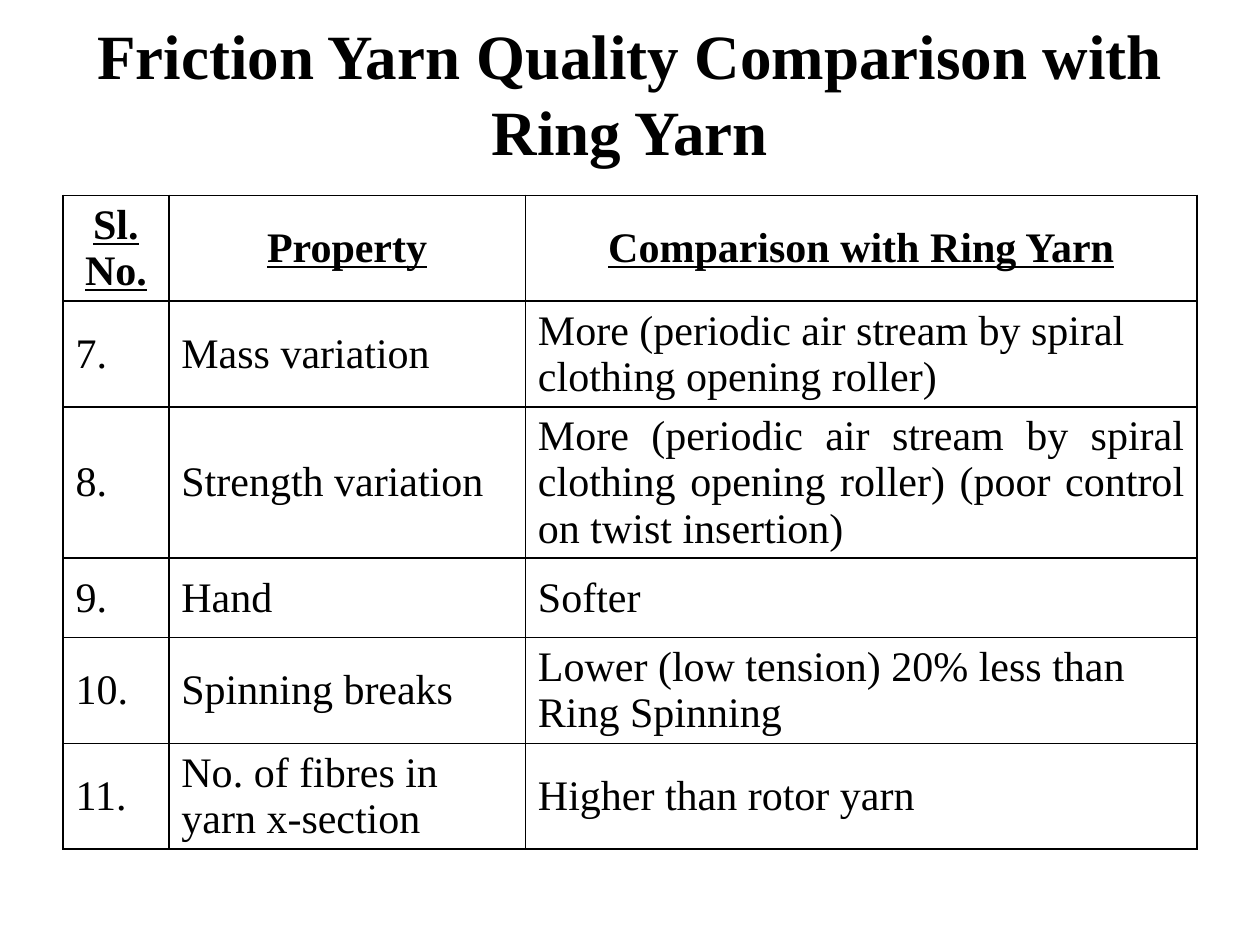
from lxml import etree
from pptx import Presentation
from pptx.dml.color import RGBColor
from pptx.enum.text import MSO_ANCHOR, PP_ALIGN
from pptx.oxml.ns import qn
from pptx.util import Inches, Pt

MIDDLE = MSO_ANCHOR.MIDDLE
LEFT, CENTER, JUSTIFY = PP_ALIGN.LEFT, PP_ALIGN.CENTER, PP_ALIGN.JUSTIFY
FONT, BLACK, WHITE = "Times New Roman", "000000", "FFFFFF"

TITLE = "Friction Yarn Quality Comparison with Ring Yarn"
ROWS = [
    ("Sl. No.", "Property", "Comparison with Ring Yarn"),
    ("7.", "Mass variation",
     "More (periodic air stream by spiral clothing opening roller)"),
    ("8.", "Strength variation",
     "More (periodic air stream by spiral clothing opening roller) "
     "(poor control on twist insertion)"),
    ("9.", "Hand", "Softer"),
    ("10.", "Spinning breaks", "Lower (low tension) 20% less than Ring Spinning"),
    ("11.", "No. of fibres in yarn x-section", "Higher than rotor yarn"),
]
JUSTIFIED_CELL = (2, 2)
COLUMN_WIDTHS = (0.84, 2.83, 5.33)
LINES_PER_ROW = (2, 2, 3, 1, 2, 2)
HEIGHT_BY_LINES = {1: 0.63, 2: 0.84, 3: 1.2}


def color(value):
    return RGBColor.from_string(value)


def style_text(frame, size, align, bold=False, underline=False):
    for para in frame.paragraphs:
        para.alignment = align
        for span in para.runs:
            font = span.font
            font.name, font.size = FONT, Pt(size)
            font.bold, font.underline = bold, underline
            font.color.rgb = color(BLACK)


def add_borders(cell, line_color, width):
    properties = cell._tc.get_or_add_tcPr()
    for index, side in enumerate(("a:lnL", "a:lnR", "a:lnT", "a:lnB")):
        line = etree.Element(qn(side), w=str(Pt(width)))
        fill = etree.SubElement(line, qn("a:solidFill"))
        etree.SubElement(fill, qn("a:srgbClr"), val=line_color)
        properties.insert(index, line)  # borders must precede the fill


def add_title(page):
    box = page.shapes.add_textbox(Inches(0.5), Inches(0.3), Inches(9), Inches(0.87))
    frame = box.text_frame
    frame.word_wrap = True
    frame.vertical_anchor = MIDDLE
    frame.text = TITLE
    style_text(frame, 36, CENTER, bold=True)


def add_comparison_table(page):
    heights = [HEIGHT_BY_LINES[lines] for lines in LINES_PER_ROW]
    table = page.shapes.add_table(
        len(ROWS), len(COLUMN_WIDTHS), Inches(0.5), Inches(1.55),
        Inches(sum(COLUMN_WIDTHS)), Inches(sum(heights))).table
    table.horz_banding = False
    for column, width in zip(table.columns, COLUMN_WIDTHS):
        column.width = Inches(width)
    for r, texts in enumerate(ROWS):
        table.rows[r].height = Inches(heights[r])
        header = r == 0
        for c, text in enumerate(texts):
            cell = table.cell(r, c)
            cell.text_frame.text = text
            cell.vertical_anchor = MIDDLE
            cell.margin_top = cell.margin_bottom = 0
            cell.fill.solid()
            cell.fill.fore_color.rgb = color(WHITE)
            add_borders(cell, BLACK, 1)
            body_align = JUSTIFY if (r, c) == JUSTIFIED_CELL else LEFT
            style_text(cell.text_frame, 24, CENTER if header else body_align,
                       bold=header, underline=header)


def main():
    deck = Presentation()
    deck.slide_width, deck.slide_height = Inches(10), Inches(7.5)
    page = deck.slides.add_slide(deck.slide_layouts[6])
    add_title(page)
    add_comparison_table(page)
    deck.save("out.pptx")


if __name__ == "__main__":
    main()
